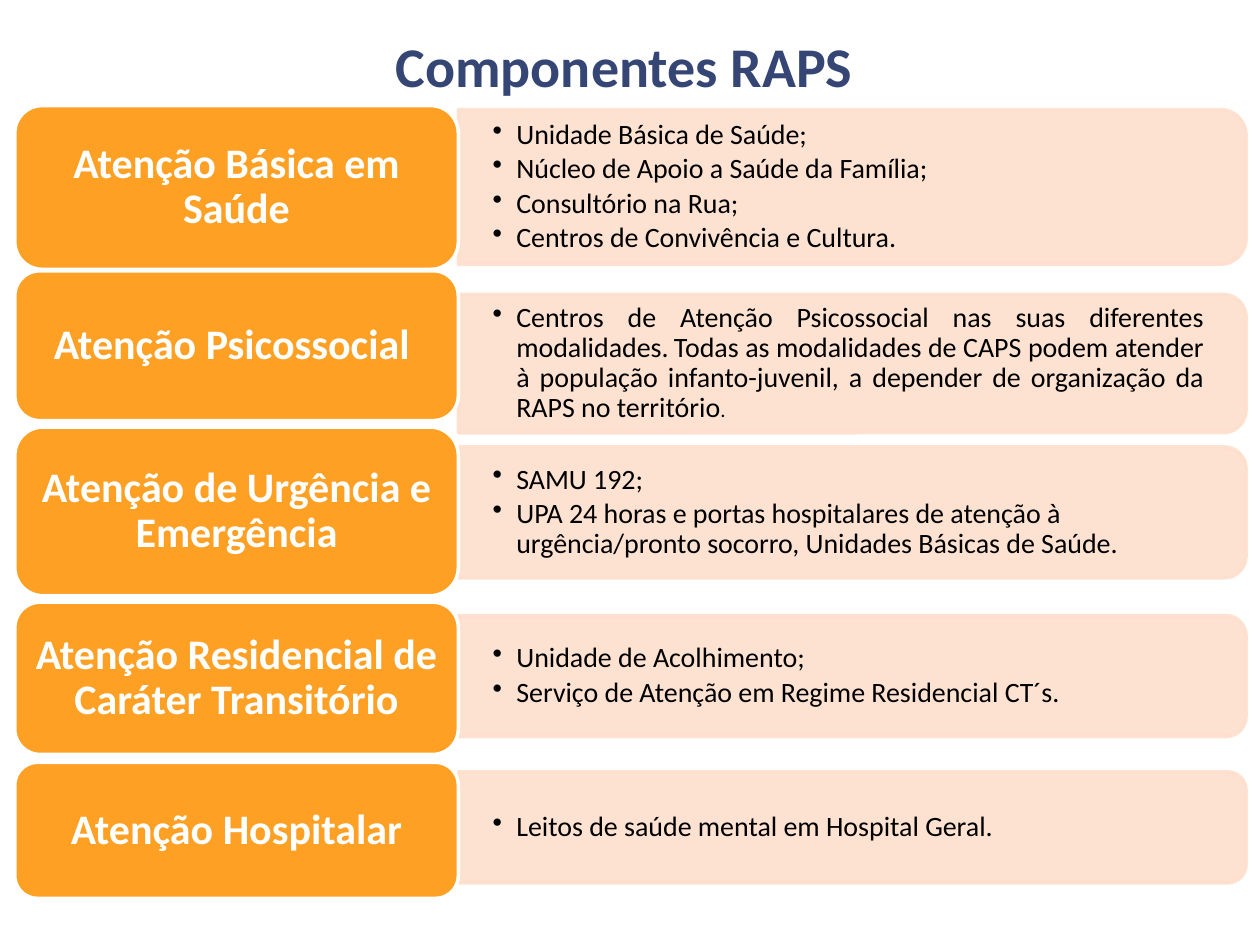
import pptx
import pptx.dml.color
import pptx.enum.shapes
import pptx.enum.text
import pptx.oxml
import pptx.oxml.ns
import pptx.util
from lxml import etree

Cm, Pt = pptx.util.Cm, pptx.util.Pt
RGBColor = pptx.dml.color.RGBColor
SHAPE = pptx.enum.shapes.MSO_SHAPE
ALIGN = pptx.enum.text.PP_ALIGN
ANCHOR = pptx.enum.text.MSO_ANCHOR
qn = pptx.oxml.ns.qn

ORANGE = RGBColor(0xFD, 0xA0, 0x23)
PEACH = RGBColor(0xFE, 0xDF, 0xCD)
NAVY = RGBColor(0x35, 0x46, 0x75)
WHITE = RGBColor(0xFF, 0xFF, 0xFF)
BLACK = RGBColor(0, 0, 0)
FONT = "Calibri"

TITLE = "Componentes RAPS"
# label, (label top, label height), (panel middle, panel height), alignment,
# bullets as lists of (text, size) spans; lengths in cm
COMPONENTS = [
    ("Atenção Básica em Saúde", (2.13, 3.3), (3.77, 3.12), ALIGN.LEFT, [
        [("Unidade Básica de Saúde;", 16)],
        [("Núcleo de Apoio a Saúde da Família;", 16)],
        [("Consultório na Rua;", 16)],
        [("Centros de Convivência e Cultura.", 16)],
    ]),
    ("Atenção Psicossocial ", (5.46, 3.02), (7.33, 2.79), ALIGN.JUSTIFY, [
        [("Centros de Atenção Psicossocial nas suas diferentes modalidades.", 16),
         (" ", 12),
         ("Todas as modalidades de CAPS podem atender à população infanto-juvenil, "
          "a depender de organização da RAPS no território", 16),
         (".", 12)],
    ]),
    ("Atenção de Urgência e Emergência", (8.61, 3.4), (10.33, 2.64), ALIGN.LEFT, [
        [("SAMU 192;", 16)],
        [("UPA 24 horas e portas hospitalares de atenção à urgência/pronto socorro, "
          "Unidades Básicas de Saúde.", 16)],
    ]),
    ("Atenção Residencial de Caráter Transitório", (12.14, 3.07), (13.63, 2.44),
     ALIGN.LEFT, [
        [("Unidade de Acolhimento;", 16)],
        [("Serviço de Atenção em Regime Residencial CT´s.", 16)],
    ]),
    ("Atenção Hospitalar", (15.37, 2.74), (16.68, 2.24), ALIGN.LEFT, [
        [("Leitos de saúde mental em Hospital Geral.", 16)],
    ]),
]

LABEL_LEFT, LABEL_WIDTH = 0.3, 8.94
PANEL_LEFT, PANEL_WIDTH = LABEL_LEFT + LABEL_WIDTH, 15.88
PANEL_PADDING = 0.15
BULLET_INDENT = Cm(0.48)


def set_font(paragraph, size, color, bold=False):
    font = paragraph.font
    font.name, font.size, font.bold = FONT, Pt(size), bold
    font.color.rgb = color


def add_block(page, kind, place, fill, line):
    block = page.shapes.add_shape(kind, *map(Cm, place))
    block.shadow.inherit = False
    block.fill.solid()
    block.fill.fore_color.rgb = fill
    block.line.color.rgb = line
    block.line.width = Pt(2)
    return block


def add_panel(page, middle, height):
    """Draw the block rounded on its right side: a top-rounded one turned by 90°."""
    center = PANEL_LEFT + PANEL_WIDTH / 2
    place = (center - height / 2, middle - PANEL_WIDTH / 2, height, PANEL_WIDTH)
    panel = add_block(page, SHAPE.ROUND_2_SAME_RECTANGLE, place, PEACH, PEACH)
    panel.rotation = 90
    for color in panel._element.spPr.iter(qn("a:srgbClr")):
        etree.SubElement(color, qn("a:alpha"), val="90000")


def add_bullets(page, middle, height, alignment, bullets):
    text_height = height - 2 * PANEL_PADDING
    box = page.shapes.add_textbox(Cm(PANEL_LEFT), Cm(middle - text_height / 2),
                                  Cm(PANEL_WIDTH - PANEL_PADDING), Cm(text_height))
    frame = box.text_frame
    frame.word_wrap = True
    frame.vertical_anchor = ANCHOR.MIDDLE
    frame.margin_left = frame.margin_right = Cm(0.69)
    frame.margin_top = frame.margin_bottom = Cm(0.34)
    for index, spans in enumerate(bullets):
        paragraph = frame.add_paragraph() if index else frame.paragraphs[0]
        paragraph.alignment = alignment
        paragraph.line_spacing = 0.9
        paragraph.space_after = Pt(2.4)
        properties = paragraph._p.get_or_add_pPr()
        properties.set("marL", str(BULLET_INDENT))
        properties.set("indent", str(-BULLET_INDENT))
        etree.SubElement(properties, qn("a:buChar"), char="•")
        set_font(paragraph, 16, BLACK)
        for text, size in spans:
            span = paragraph.add_run()
            span.text = text
            if size != 16:
                span.font.size = Pt(size)


def add_label(page, text, top, height):
    label = add_block(page, SHAPE.ROUNDED_RECTANGLE,
                      (LABEL_LEFT, top, LABEL_WIDTH, height), ORANGE, WHITE)
    frame = label.text_frame
    frame.word_wrap = True
    frame.vertical_anchor = ANCHOR.MIDDLE
    frame.margin_left = frame.margin_right = Cm(0.2)
    paragraph = frame.paragraphs[0]
    paragraph.text = text
    paragraph.alignment = ALIGN.CENTER
    paragraph.line_spacing = 0.9
    set_font(paragraph, 24, WHITE, bold=True)


def add_title(page):
    box = page.shapes.add_textbox(Cm(2.49), Cm(0.1), Cm(20.19), Cm(2.01))
    frame = box.text_frame
    frame.word_wrap = True
    frame.vertical_anchor = ANCHOR.BOTTOM
    paragraph = frame.paragraphs[0]
    paragraph.text = TITLE
    paragraph.alignment = ALIGN.CENTER
    set_font(paragraph, 32, NAVY, bold=True)


def main():
    deck = pptx.Presentation()
    deck.slide_width, deck.slide_height = Cm(25.4), Cm(19.05)
    page = deck.slides.add_slide(deck.slide_layouts[6])
    for name, label_span, panel_span, alignment, bullets in COMPONENTS:
        add_panel(page, *panel_span)
        add_bullets(page, *panel_span, alignment, bullets)
        add_label(page, name, *label_span)
    add_title(page)
    deck.save("out.pptx")


if __name__ == "__main__":
    main()
